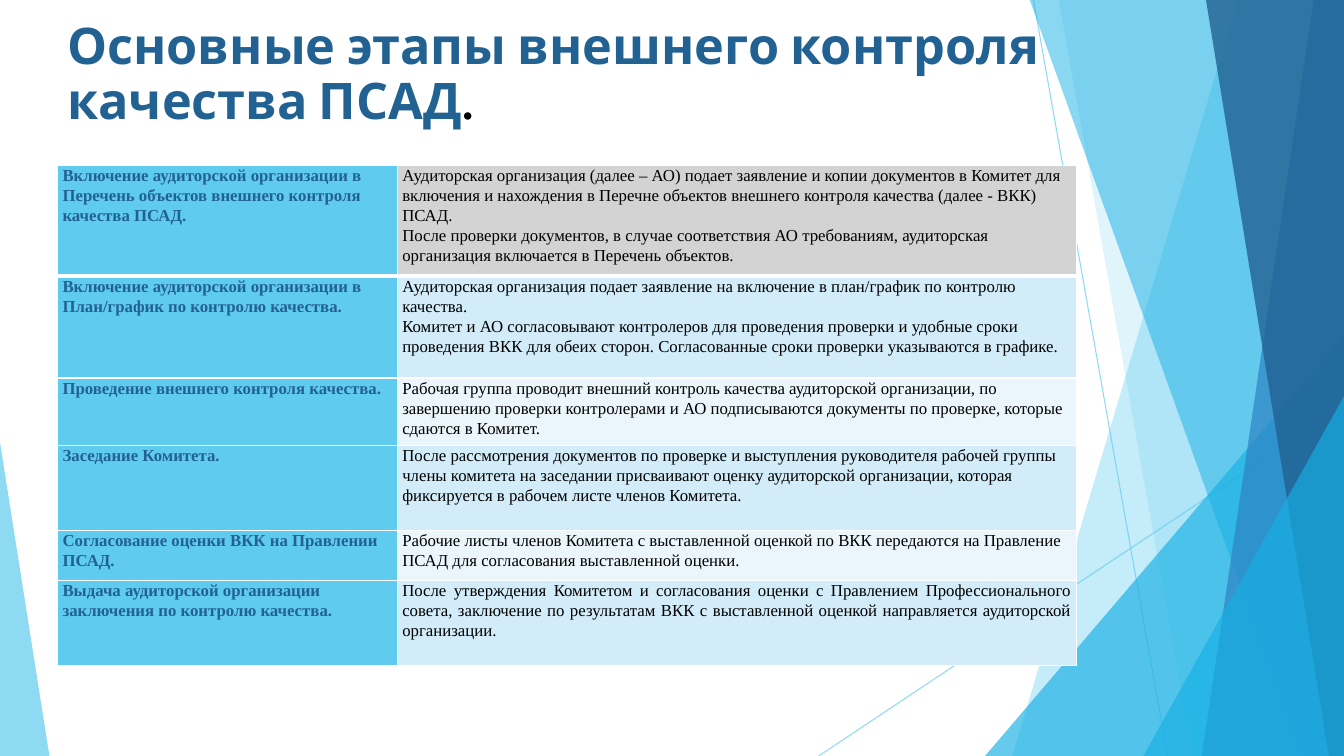
from lxml import etree
from pptx import Presentation, util as u
from pptx.dml.color import RGBColor
from pptx.enum import shapes, text
from pptx.oxml.ns import qn

PX = 9144
WIDTH, HEIGHT = 1333, 750
COLORS = {
    "sky": "5FCBEF", "cyan": "17B0E4", "blue": "2E83C3", "navy": "226292",
    "black": "000000", "white": "FFFFFF", "gray": "D3D3D3",
    "tint": "D2ECF9", "pale": "EAF6FC",
}
HEADING = {"size": u.Pt(36), "name": "Cabin", "bold": True}
HEADING_DOT = {"size": u.Pt(32.4), "name": "Times New Roman", "bold": True}
STAGE = {"size": u.Pt(12), "name": "Times New Roman", "bold": True}
DETAIL = {**STAGE, "bold": False}

RAYS = [((1025, 0), (1158, 750)), ((1333, 403), (812, 750))]
FACETS = [
    ("sky", 36, [(1228, -1), (1333, -1), (1333, 750), (1004, 750)]),
    ("sky", 20, [(1050, -1), (1333, -1), (1333, 750), (1183, 750)]),
    ("cyan", 66, (977, 333, 356, 417, 1)),
    ("cyan", 50, [(1021, -1), (1333, -1), (1333, 750), (1291, 750)]),
    ("blue", 70, [(1303, -1), (1333, -1), (1333, 750), (1192, 750)]),
    ("navy", 80, [(1196, -1), (1333, -1), (1333, 750), (1318, 750)]),
    ("cyan", 66, (1134, 393, 199, 357, 1)),
    ("sky", 70, (0, 439, 49, 311, 0)),
]
COLUMNS = [337, 674]
STAGES = [
    (110, "gray", "Включение аудиторской организации в Перечень объектов внешнего контроля качества ПСАД.",
     ["Аудиторская организация (далее – АО) подает заявление и копии документов в Комитет для включения "
      "и нахождения в Перечне объектов внешнего контроля качества (далее - ВКК) ПСАД.",
      "После проверки документов, в случае соответствия АО требованиям, аудиторская организация "
      "включается в Перечень объектов."]),
    (101, "tint", "Включение аудиторской организации в План/график по контролю качества.",
     ["Аудиторская организация подает заявление на включение в план/график по контролю качества.",
      "Комитет и АО согласовывают контролеров для проведения проверки и удобные сроки проведения ВКК "
      "для обеих сторон. Согласованные сроки проверки указываются в графике."]),
    (67, "pale", "Проведение внешнего контроля качества.",
     ["Рабочая группа проводит внешний контроль качества аудиторской организации, по завершению проверки "
      "контролерами и АО подписываются документы по проверке, которые сдаются в Комитет."]),
    (84, "tint", "Заседание Комитета.",
     ["После рассмотрения документов по проверке и выступления руководителя рабочей группы члены комитета "
      "на заседании присваивают оценку аудиторской организации, которая фиксируется в рабочем листе "
      "членов Комитета."]),
    (50, "pale", "Согласование оценки ВКК на Правлении ПСАД.",
     ["Рабочие листы членов Комитета с выставленной оценкой по ВКК передаются на Правление ПСАД "
      "для согласования выставленной оценки."]),
    (84, "tint", "Выдача аудиторской организации заключения по контролю качества.",
     ["После утверждения Комитетом и согласования оценки с Правлением Профессионального совета, заключение "
      "по результатам ВКК с выставленной оценкой направляется аудиторской организации."]),
]


def rgb(color):
    return RGBColor.from_string(COLORS[color])


def apply(target, values):
    for name, value in values.items():
        setattr(target, name, value)


def add_span(para, words, style, color):
    span = para.add_run()
    span.text = words
    apply(span.font, style)
    span.font.color.rgb = rgb(color)


def set_alpha(fill, percent):
    color = next(fill.iter(qn("a:srgbClr")))
    etree.SubElement(color, qn("a:alpha"), val=str(percent * 1000))


def add_ray(page, left, top, start, end):
    ray = page.shapes.add_connector(
        shapes.MSO_CONNECTOR.STRAIGHT,
        (left + start[0]) * PX, (top + start[1]) * PX,
        (left + end[0]) * PX, (top + end[1]) * PX)
    ray.line.width = u.Pt(0.75)
    ray.line.color.rgb = rgb("sky")
    properties = ray._element.spPr
    set_alpha(properties, 70)
    etree.SubElement(properties, qn("a:effectLst"))


def add_facet(page, left, top, color, opacity, outline):
    if isinstance(outline, list):
        points = [(left + x, top + y) for x, y in outline]
        builder = page.shapes.build_freeform(*points[0], scale=PX)
        builder.add_line_segments(points[1:], close=True)
        facet = builder.convert_to_shape()
    else:
        x, y, width, height, apex = outline
        facet = page.shapes.add_shape(
            shapes.MSO_SHAPE.ISOSCELES_TRIANGLE,
            (left + x) * PX, (top + y) * PX, width * PX, height * PX)
        facet.adjustments[0] = apex
    facet.shadow.inherit = False
    facet.line.fill.background()
    facet.fill.solid()
    facet.fill.fore_color.rgb = rgb(color)
    set_alpha(facet._element.spPr, opacity)


def add_backdrop(page, left, top):
    for start, end in RAYS:
        add_ray(page, left, top, start, end)
    for color, opacity, outline in FACETS:
        add_facet(page, left, top, color, opacity, outline)


def add_heading(page, left, top, width, height):
    box = page.shapes.add_textbox(left * PX, top * PX, width * PX, height * PX)
    apply(box.text_frame, {"word_wrap": True, "vertical_anchor": text.MSO_ANCHOR.TOP,
                           "margin_top": 8 * PX})
    para = box.text_frame.paragraphs[0]
    para.line_spacing = 0.9
    add_span(para, "Основные этапы внешнего контроля качества ПСАД", HEADING, "navy")
    add_span(para, ".", HEADING_DOT, "black")


def add_borders(cell, bottom):
    properties = cell._tc.get_or_add_tcPr()
    widths = {"lnL": 1, "lnR": 1, "lnT": 1, "lnB": bottom}
    for position, (side, points) in enumerate(widths.items()):
        border = etree.Element(qn(f"a:{side}"), w=str(u.Pt(points)))
        fill = etree.SubElement(border, qn("a:solidFill"))
        etree.SubElement(fill, qn("a:srgbClr"), val=COLORS["white"])
        properties.insert(position, border)


def fill_cell(cell, paragraphs, style, color, fill, bottom, align):
    apply(cell, {"margin_left": 5 * PX, "margin_right": 5 * PX, "margin_top": 0,
                 "margin_bottom": 0, "vertical_anchor": text.MSO_ANCHOR.TOP})
    cell.fill.solid()
    cell.fill.fore_color.rgb = rgb(fill)
    add_borders(cell, bottom)
    frame = cell.text_frame
    for index, words in enumerate(paragraphs):
        para = frame.add_paragraph() if index else frame.paragraphs[0]
        apply(para, {"line_spacing": 1.07, "alignment": align})
        add_span(para, words, style, color)


def add_stages(page, left, top):
    height = sum(stage[0] for stage in STAGES)
    table = page.shapes.add_table(len(STAGES), len(COLUMNS), left * PX, top * PX,
                                  sum(COLUMNS) * PX, height * PX).table
    for column, width in zip(table.columns, COLUMNS):
        column.width = width * PX
    last = len(STAGES) - 1
    for index, (row_height, fill, stage, details) in enumerate(STAGES):
        table.rows[index].height = row_height * PX
        bottom = 1 if index else 3
        align = text.PP_ALIGN.JUSTIFY if index == last else text.PP_ALIGN.LEFT
        fill_cell(table.cell(index, 0), [stage], STAGE, "navy", "sky", bottom, text.PP_ALIGN.LEFT)
        fill_cell(table.cell(index, 1), details, DETAIL, "black", fill, bottom, align)


def main():
    deck = Presentation()
    apply(deck, {"slide_width": WIDTH * PX, "slide_height": HEIGHT * PX})
    page = deck.slides.add_slide(deck.slide_layouts[6])
    add_backdrop(page, 0, 0)
    add_heading(page, 57, 13, 1090, 140)
    add_stages(page, 57, 164)
    deck.save("out.pptx")


if __name__ == "__main__":
    main()
